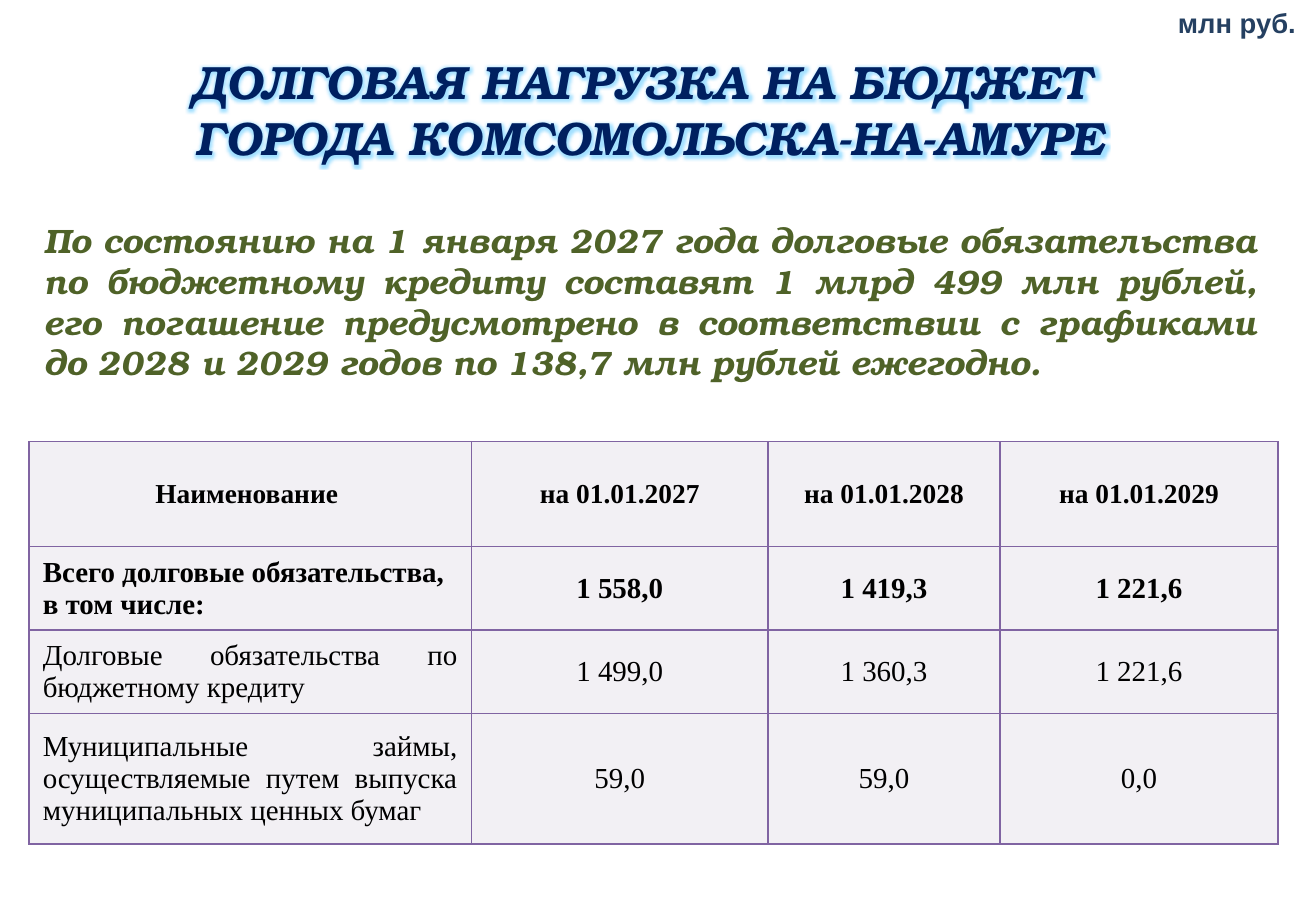
from lxml import etree
from pptx import Presentation
from pptx.dml.color import RGBColor
from pptx.enum import text
from pptx.oxml import ns
from pptx.util import Pt

NAVY = RGBColor(0x00, 0x20, 0x60)
OLIVE = RGBColor(0x4F, 0x62, 0x28)
SLATE = RGBColor(0x25, 0x40, 0x61)
BLACK = RGBColor(0x00, 0x00, 0x00)
LILAC = RGBColor(0xED, 0xEA, 0xF0)
PURPLE = RGBColor(0x80, 0x64, 0xA2)
GLOW = RGBColor(0x66, 0xCC, 0xFF)

SERIF = "TeX Gyre Bonum"
TABLE_FONT = "Times New Roman"
CENTER, JUSTIFY, LEFT = text.PP_ALIGN.CENTER, text.PP_ALIGN.JUSTIFY, text.PP_ALIGN.LEFT

TITLE = "ДОЛГОВАЯ НАГРУЗКА НА БЮДЖЕТ \nГОРОДА КОМСОМОЛЬСКА-НА-АМУРЕ"
SUMMARY = (
    "По состоянию на 1 января 2027 года долговые обязательства по бюджетному "
    "кредиту составят 1 млрд 499 млн рублей, его погашение предусмотрено в "
    "соответствии с графиками до 2028 и 2029 годов по 138,7 млн рублей ежегодно."
)
UNITS = "млн руб."
DEBT = [
    ("Наименование ", "на 01.01.2027", "на 01.01.2028", "на 01.01.2029"),
    ("Всего долговые обязательства, \nв том числе:", "1 558,0", "1 419,3", "1 221,6"),
    ("Долговые обязательства по бюджетному кредиту", "1 499,0", "1 360,3", "1 221,6"),
    ("Муниципальные займы, осуществляемые путем выпуска муниципальных ценных бумаг",
     "59,0", "59,0", "0,0"),
]
COLUMN_WIDTHS = (275, 184.5, 144, 173)
ROW_HEIGHTS = (65, 52, 52, 81)
BOLD_ROWS = 2


def add_child(parent, tag, **attributes):
    return etree.SubElement(parent, ns.qn(tag), attributes)


def write(frame, content, align, font_name, size, color, bold=True, italic=False):
    frame.text = content
    for paragraph in frame.paragraphs:
        paragraph.alignment = align
        for run in paragraph.runs:
            font = run.font
            font.name, font.size = font_name, Pt(size)
            font.bold, font.italic = bold, italic
            font.color.rgb = color


def add_label(slide, box, content, *style, wrap=True, **options):
    frame = slide.shapes.add_textbox(*map(Pt, box)).text_frame
    frame.word_wrap = wrap
    frame.margin_left = frame.margin_right = Pt(8.6)
    frame.margin_top = frame.margin_bottom = Pt(4.3)
    write(frame, content, *style, **options)
    return frame


def add_glow(run):
    fill = run.font.color and run.font.fill
    fill.solid()
    fill.fore_color.rgb = NAVY
    properties = run._r.get_or_add_rPr()
    effects = etree.Element(ns.qn("a:effectLst"))
    glow = add_child(effects, "a:glow", rad=str(Pt(6)))
    color = add_child(glow, "a:srgbClr", val=str(GLOW))
    add_child(color, "a:alpha", val="60000")
    properties.find(ns.qn("a:solidFill")).addnext(effects)


def paint_cell(cell):
    """Give the cell a translucent fill and a thin border on every side."""
    cell.fill.solid()
    cell.fill.fore_color.rgb = LILAC
    properties = cell._tc.get_or_add_tcPr()
    add_child(properties.find(".//" + ns.qn("a:srgbClr")), "a:alpha", val="70000")
    for position, side in enumerate(("a:lnL", "a:lnR", "a:lnT", "a:lnB")):
        border = etree.Element(ns.qn(side), w=str(Pt(1)))
        add_child(add_child(border, "a:solidFill"), "a:srgbClr", val=str(PURPLE))
        properties.insert(position, border)


def add_debt_table(slide):
    table = slide.shapes.add_table(
        len(DEBT), len(COLUMN_WIDTHS), Pt(18), Pt(274.5),
        Pt(sum(COLUMN_WIDTHS)), Pt(sum(ROW_HEIGHTS))).table
    table.first_row = table.horz_banding = False
    for column, width in zip(table.columns, COLUMN_WIDTHS):
        column.width = Pt(width)
    for row, height in zip(table.rows, ROW_HEIGHTS):
        row.height = Pt(height)
    for r, values in enumerate(DEBT):
        for c, value in enumerate(values):
            cell = table.cell(r, c)
            cell.vertical_anchor = text.MSO_ANCHOR.MIDDLE
            cell.margin_left = cell.margin_right = Pt(8.6)
            cell.margin_top = cell.margin_bottom = Pt(4.3)
            align = JUSTIFY if r and not c else CENTER
            write(cell.text_frame, value, align, TABLE_FONT, 18 if r else 17,
                  BLACK, bold=r < BOLD_ROWS)
            paint_cell(cell)


def main():
    deck = Presentation()
    deck.slide_width, deck.slide_height = Pt(818), Pt(571)
    slide = deck.slides.add_slide(deck.slide_layouts[6])
    title = add_label(slide, (18.7, 28.8, 771, 118), TITLE, CENTER, SERIF, 29, NAVY,
                      italic=True)
    for paragraph in title.paragraphs:
        for run in paragraph.runs:
            add_glow(run)
    add_label(slide, (18.7, 132.5, 771, 157), SUMMARY, JUSTIFY, SERIF, 21, OLIVE,
              italic=True)
    add_debt_table(slide)
    add_label(slide, (723.6, -0.7, 92, 29.5), UNITS, LEFT, "Arial", 17, SLATE,
              wrap=False)
    deck.save("out.pptx")


if __name__ == "__main__":
    main()
